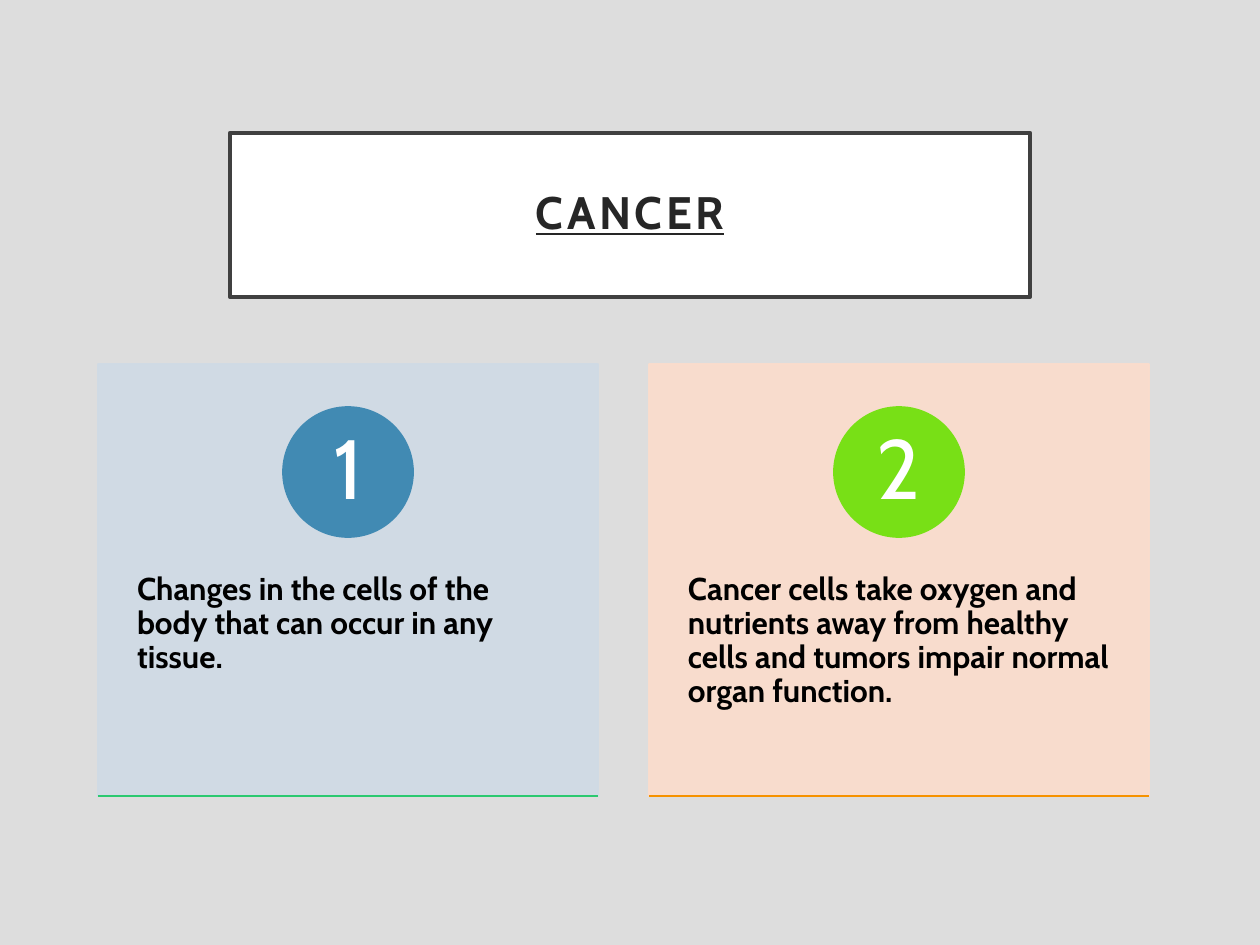
from lxml.etree import SubElement
from pptx import Presentation
from pptx.dml.color import RGBColor
from pptx.enum.shapes import MSO_CONNECTOR, MSO_SHAPE
from pptx.enum.text import MSO_ANCHOR, PP_ALIGN
from pptx.oxml.ns import qn
from pptx.util import Emu, Pt

# Content
TITLE = "CANCER"
CARDS = [
    {"number": "1", "panel": "blue_panel", "badge": "blue", "rule": "green",
     "text": "Changes in the cells of the body that can occur in any tissue."},
    {"number": "2", "panel": "peach_panel", "badge": "lime", "rule": "orange",
     "text": "Cancer cells take oxygen and nutrients away from healthy cells "
             "and tumors impair normal organ function."},
]
COLORS = {
    "background": "DDDDDD", "white": "FFFFFF", "black": "000000",
    "frame": "404040", "title": "262626",
    "blue_panel": "CFDAE5", "blue": "418AB3", "green": "2BC970",
    "peach_panel": "FBDCCC", "lime": "78E016", "orange": "F69200",
}
FONT = "Cabin"

# Layout in px
EMU_PER_PX = 914400 / 126
SLIDE_W, SLIDE_H = 1260, 945
TITLE_BOX = (230, 133, 800, 164)
CARD_LEFT, CARD_TOP, CARD_W, CARD_H, CARD_STEP = 98, 364, 500, 432, 551
BODY_TOP, BODY_H = 528, 260
BADGE_TOP, BADGE_SIZE, NUMBER_INSET = 407, 130, 19


def px(length):
    return Emu(round(length * EMU_PER_PX))


def rgb(name):
    return RGBColor.from_string(COLORS[name])


def add_figure(slide, preset, box, fill, line, width=1, alpha=None):
    figure = slide.shapes.add_shape(preset, *map(px, box))
    figure.shadow.inherit = False
    figure.fill.solid()
    figure.fill.fore_color.rgb = rgb(fill)
    figure.line.color.rgb = rgb(line)
    figure.line.width = Pt(width)
    if alpha:
        for color in figure.element.spPr.iter(qn("a:srgbClr")):
            SubElement(color, qn("a:alpha"), val=str(alpha * 1000))
    return figure


def write(holder, text, size, color, insets, align=PP_ALIGN.LEFT,
          anchor=MSO_ANCHOR.TOP, bold=False):
    frame = holder.text_frame
    frame.word_wrap = True
    frame.vertical_anchor = anchor
    frame.margin_left = frame.margin_right = px(insets[0])
    frame.margin_top = frame.margin_bottom = px(insets[1])
    paragraph = frame.paragraphs[0]
    paragraph.alignment = align
    paragraph.line_spacing = 0.9
    run = paragraph.add_run()
    run.text = text
    run.font.name = FONT
    run.font.size = Pt(size)
    run.font.bold = bold
    run.font.color.rgb = rgb(color)
    return run


def add_title(slide):
    banner = add_figure(slide, MSO_SHAPE.RECTANGLE, TITLE_BOX, "white", "frame", 2.5)
    run = write(banner, TITLE, 26, "title", (25, 25), PP_ALIGN.CENTER,
                MSO_ANCHOR.MIDDLE, bold=True)
    run.font.underline = True
    run.font._element.set("spc", "200")


def add_card(slide, card, left):
    # Panel and its text
    add_figure(slide, MSO_SHAPE.RECTANGLE, (left, CARD_TOP, CARD_W, CARD_H),
               card["panel"], card["panel"], alpha=90)
    body = slide.shapes.add_textbox(*map(px, (left, BODY_TOP, CARD_W, BODY_H)))
    write(body, card["text"], 18, "black", (39, 45), bold=True)

    # Numbered badge
    badge_left = left + (CARD_W - BADGE_SIZE) / 2
    add_figure(slide, MSO_SHAPE.OVAL, (badge_left, BADGE_TOP, BADGE_SIZE, BADGE_SIZE),
               card["badge"], card["badge"])
    number_size = BADGE_SIZE - 2 * NUMBER_INSET
    number = slide.shapes.add_textbox(
        px(badge_left + NUMBER_INSET), px(BADGE_TOP + NUMBER_INSET),
        px(number_size), px(number_size))
    write(number, card["number"], 48, "white", (10, 1), PP_ALIGN.CENTER,
          MSO_ANCHOR.MIDDLE)

    # Rule along the bottom edge
    bottom = CARD_TOP + CARD_H
    rule = slide.shapes.add_connector(
        MSO_CONNECTOR.STRAIGHT, px(left), px(bottom), px(left + CARD_W), px(bottom))
    rule.line.color.rgb = rgb(card["rule"])
    rule.line.width = Pt(1)
    SubElement(rule.element.spPr, qn("a:effectLst"))


def main():
    deck = Presentation()
    deck.slide_width, deck.slide_height = px(SLIDE_W), px(SLIDE_H)
    slide = deck.slides.add_slide(deck.slide_layouts[6])
    slide.background.fill.solid()
    slide.background.fill.fore_color.rgb = rgb("background")
    add_title(slide)
    for index, card in enumerate(CARDS):
        add_card(slide, card, CARD_LEFT + index * CARD_STEP)
    deck.save("out.pptx")


if __name__ == "__main__":
    main()
